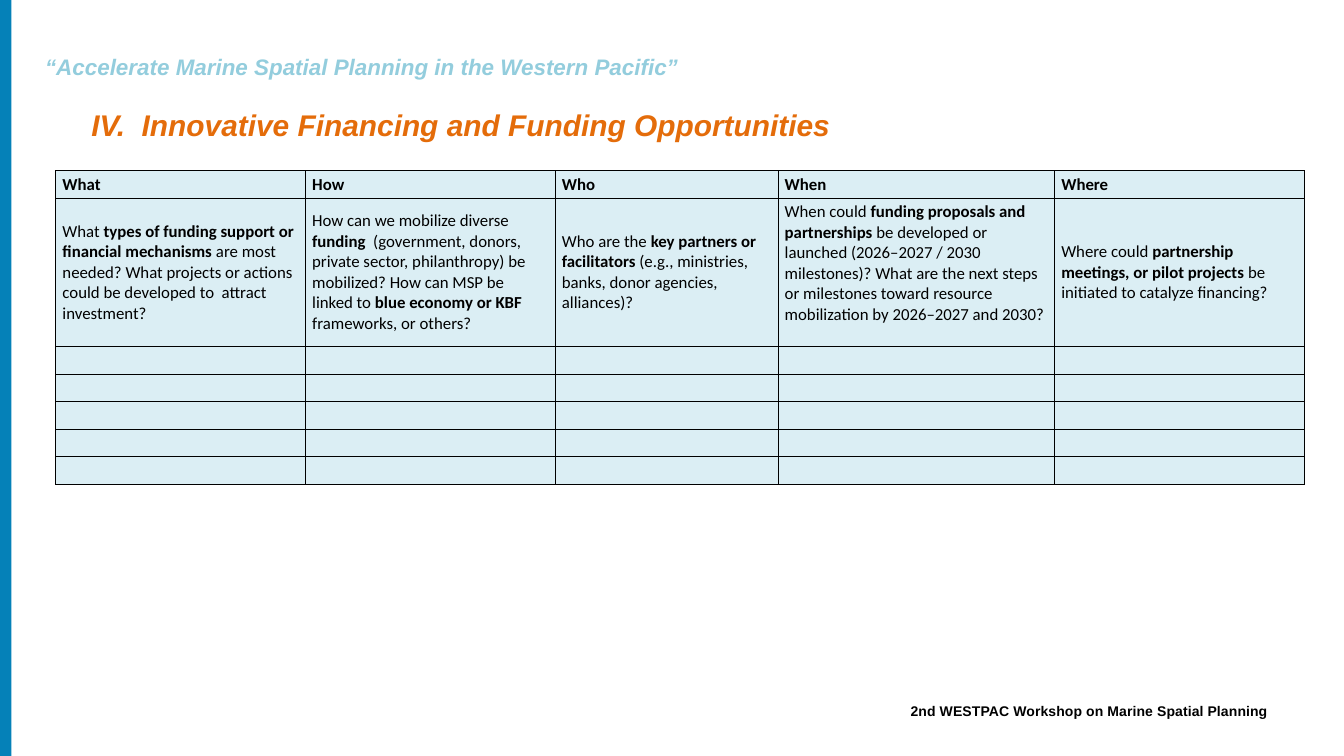
from lxml.etree import SubElement
from pptx import Presentation
from pptx.dml.color import RGBColor
from pptx.enum.shapes import MSO_SHAPE
from pptx.enum.text import MSO_ANCHOR, PP_ALIGN
from pptx.oxml.ns import qn
from pptx.util import Inches, Pt

HEADINGS = ["What", "How", "Who", "When", "Where"]
QUESTIONS = [
    ["What ", "types of funding support or financial mechanisms",
     " are most needed? What projects or actions could be developed to  attract investment?"],
    ["How can we mobilize diverse ", "funding ",
     " (government, donors, private sector, philanthropy) be mobilized? How can MSP be linked to ",
     "blue economy or KBF", " frameworks, or others?"],
    ["Who are the ", "key partners or facilitators",
     " (e.g., ministries, banks, donor agencies, alliances)?"],
    ["When could ", "funding proposals and partnerships",
     " be developed or launched (2026–2027 / 2030 milestones)? What are the next steps"
     " or milestones toward resource mobilization by 2026–2027 and 2030?"],
    ["Where could ", "partnership meetings, or pilot projects",
     " be initiated to catalyze financing?"],
]
COLUMN_WIDTHS = [3.72, 3.72, 3.32, 4.12, 3.72]
ROW_HEIGHTS = [0.41, 2.2] + [0.41] * 5


def color(value):
    """Return the colour for a hex string."""
    return RGBColor.from_string(value)


def add_text(paragraph, text, size=18, font="Calibri", fill="000000",
             bold=False, italic=False, spacing=None):
    """Append one formatted run to a paragraph."""
    run = paragraph.add_run()
    run.text = text
    run.font.size = Pt(size)
    run.font.name = font
    run.font.bold = bold
    run.font.italic = italic
    run.font.color.rgb = color(fill)
    if spacing is not None:
        run._r.get_or_add_rPr().set("spc", str(round(spacing * 100)))


def add_side_bar(slide, left, top, width, height):
    """Draw the coloured bar at the slide's edge."""
    shape = slide.shapes.add_shape(
        MSO_SHAPE.RECTANGLE, Inches(left), Inches(top), Inches(width), Inches(height))
    shape.shadow.inherit = False
    shape.fill.solid()
    shape.fill.fore_color.rgb = color("0581B8")
    shape.line.fill.background()


def add_label(slide, left, top, width, height, text,
              align=PP_ALIGN.LEFT, anchor=MSO_ANCHOR.TOP, **text_format):
    """Add a text box without margins."""
    box = slide.shapes.add_textbox(
        Inches(left), Inches(top), Inches(width), Inches(height))
    frame = box.text_frame
    frame.word_wrap = True
    frame.vertical_anchor = anchor
    frame.margin_left = frame.margin_right = frame.margin_top = frame.margin_bottom = 0
    paragraph = frame.paragraphs[0]
    paragraph.alignment = align
    add_text(paragraph, text, font="Arial", bold=True, **text_format)


def place_title(slide, left, top, width, height, text):
    """Position and format the title placeholder."""
    title = slide.shapes.title
    title.left, title.top = Inches(left), Inches(top)
    title.width, title.height = Inches(width), Inches(height)
    title.text_frame.word_wrap = True
    title.text_frame.vertical_anchor = MSO_ANCHOR.TOP
    paragraph = title.text_frame.paragraphs[0]
    paragraph.alignment = PP_ALIGN.LEFT
    add_text(paragraph, text, size=32, font="Arial", fill="E46C0A", bold=True, italic=True)


def format_cell(cell):
    """Fill a cell and outline its four sides."""
    cell.vertical_anchor = MSO_ANCHOR.MIDDLE
    properties = cell._tc.get_or_add_tcPr()
    for side in ("lnL", "lnR", "lnT", "lnB"):
        line = SubElement(properties, qn(f"a:{side}"), w=str(Pt(1)))
        solid = SubElement(line, qn("a:solidFill"))
        SubElement(solid, qn("a:srgbClr"), val="000000")
    cell.fill.solid()
    cell.fill.fore_color.rgb = color("DBEEF4")


def add_planning_table(slide, left, top, width, height):
    """Add the table of questions with blank rows for answers."""
    table = slide.shapes.add_table(
        len(ROW_HEIGHTS), len(COLUMN_WIDTHS),
        Inches(left), Inches(top), Inches(width), Inches(height)).table
    table.first_row = table.horz_banding = False
    for column, share in zip(table.columns, COLUMN_WIDTHS):
        column.width = Inches(width * share / sum(COLUMN_WIDTHS))
    for row, share in zip(table.rows, ROW_HEIGHTS):
        row.height = Inches(height * share / sum(ROW_HEIGHTS))
    for cell in table.iter_cells():
        format_cell(cell)
    for index, (heading, question) in enumerate(zip(HEADINGS, QUESTIONS)):
        add_text(table.cell(0, index).text_frame.paragraphs[0], heading, bold=True)
        paragraph = table.cell(1, index).text_frame.paragraphs[0]
        for position, part in enumerate(question):
            add_text(paragraph, part, bold=position % 2 == 1)
    table.cell(1, HEADINGS.index("When")).vertical_anchor = MSO_ANCHOR.TOP


def main():
    """Build and save the slide."""
    presentation = Presentation()
    presentation.slide_width = Inches(20)
    presentation.slide_height = Inches(11.25)
    slide = presentation.slides.add_slide(presentation.slide_layouts.get_by_name("Title Only"))
    add_side_bar(slide, 0, 0, 0.17, 11.25)
    add_label(slide, 10.19, 10.46, 8.68, 0.25,
              "2nd WESTPAC Workshop on Marine Spatial Planning",
              align=PP_ALIGN.RIGHT, anchor=MSO_ANCHOR.MIDDLE, size=15, spacing=0.1)
    add_label(slide, 0.67, 0.79, 13.42, 0.4,
              "“Accelerate Marine Spatial Planning in the Western Pacific”",
              size=24, fill="93CDDD", italic=True)
    add_planning_table(slide, 0.83, 2.54, 18.58, 4.67)
    place_title(slide, 1.26, 1.54, 12.24, 0.64,
                "IV.  Innovative Financing and Funding Opportunities")
    presentation.save("out.pptx")


if __name__ == "__main__":
    main()
